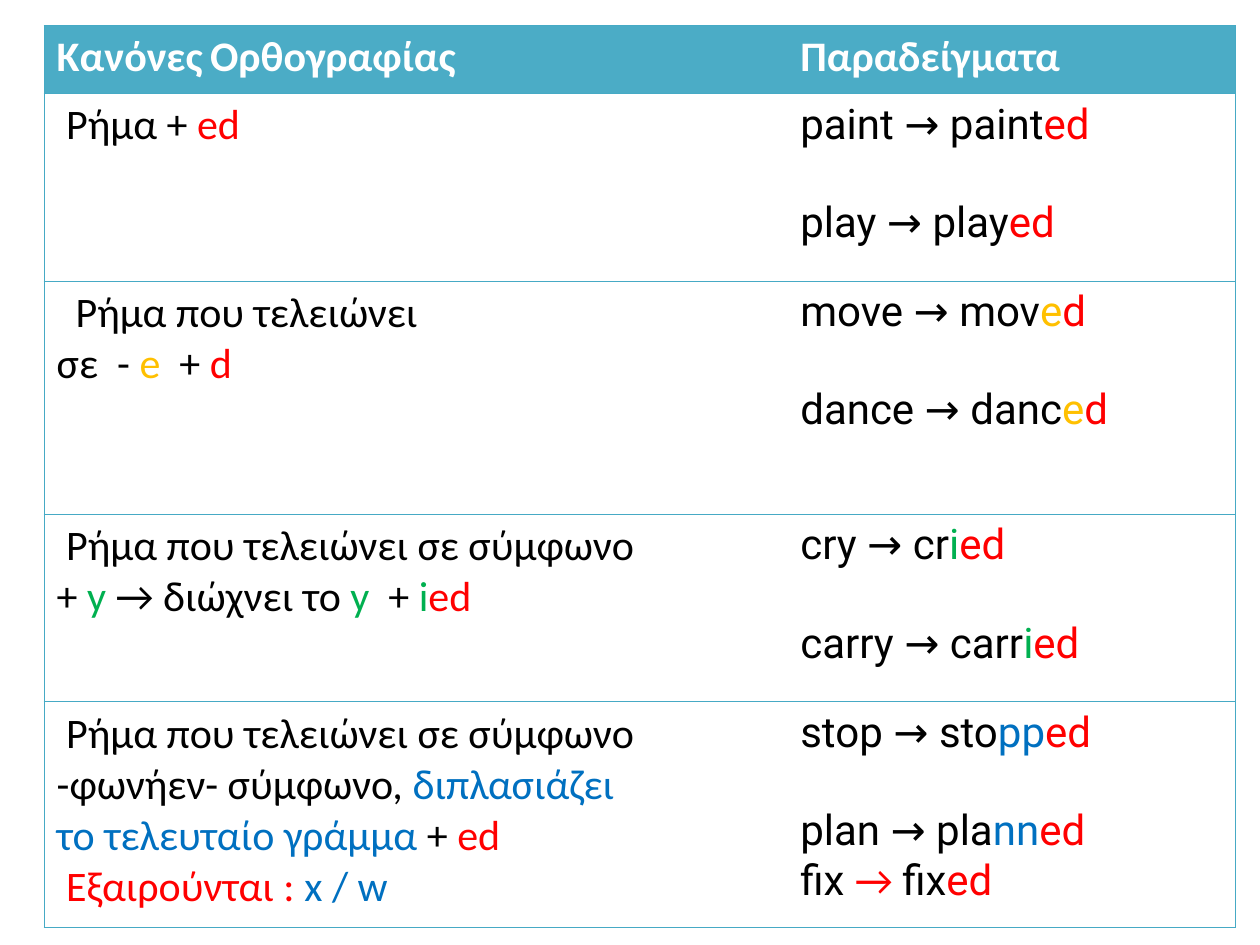
from lxml.etree import SubElement
from pptx import Presentation
from pptx.dml.color import RGBColor
from pptx.oxml.ns import qn
from pptx.util import Cm, Pt

THEME = {
    "black": "000000", "white": "FFFFFF", "red": "FF0000", "amber": "FFC000",
    "green": "00B050", "blue": "0070C0", "header": "4BACC6", "border": "46AAC5",
    "rule_font": "Calibri", "example_font": "Roboto",
    "size": 24, "small": 18, "gap": 28, "indent": 5.4, "line": 0.75,
}
NO_STYLE = "{2D5ABB26-0587-4C30-8999-92F81FD0307C}"
LEFT, TOP = 0.89, 0.52
COLUMN_WIDTHS = [14.99, 9.02]
ROW_HEIGHTS = [1.37, 3.78, 4.7, 3.78, 4.55]

HEADERS = [
    [("Κανόνες", "white"), (" ", "white", {"size": THEME["small"]}), ("Ορθογραφίας", "white")],
    [("Παραδείγματα", "white")],
]
RULES = [
    [[("Ρήμα + ", "black"), ("ed", "red")]],
    [[("Ρήμα που τελειώνει", "black")],
     [("σε  -", "black"), (" e  ", "amber"), ("+ ", "black"), ("d", "red")]],
    [[("Ρήμα που τελειώνει σε σύμφωνο", "black")],
     [("+ ", "black"), ("y ", "green"), ("→ διώχνει το ", "black"), ("y", "green"),
      ("  + ", "black"), ("i", "green"), ("ed", "red")]],
    [[("Ρήμα που τελειώνει σε σύμφωνο", "black")],
     [("-φωνήεν- σύμφωνο, ", "black"), ("διπλασιάζει", "blue")],
     [("το τελευταίο γράμμα ", "blue"), ("+ ", "black"), ("ed", "red")],
     [("Εξαιρούνται : ", "red"), ("x / w", "blue")]],
]
RULE_INDENTS = [{0: 1}, {0: 2}, {0: 1}, {0: 1, 3: 1}]
EXAMPLES = [
    [[("paint → paint", "black"), ("ed", "red")],
     [("play → play", "black"), ("ed", "red")]],
    [[("move → mov", "black"), ("e", "amber"), ("d", "red")],
     [("dance → danc", "black"), ("e", "amber"), ("d", "red")]],
    [[("cry → cr", "black"), ("i", "green"), ("ed", "red")],
     [("carry → carr", "black"), ("i", "green"), ("ed", "red")]],
    [[("stop → sto", "black"), ("pp", "blue"), ("ed", "red")],
     [("plan → pla", "black"), ("nn", "blue"), ("ed", "red")],
     [("fix ", "black"), ("→ ", "red", {"font": THEME["rule_font"]}),
      ("fix", "black"), ("ed", "red")]],
]


def color(name):
    return RGBColor.from_string(THEME[name])


def write(cell, lines, font, bold=False, gaps=(), indents=None):
    frame = cell.text_frame
    for number, line in enumerate(lines):
        para = frame.paragraphs[0] if number == 0 else frame.add_paragraph()
        if number in gaps:
            para.space_before = Pt(THEME["gap"])
        if indents and number in indents:
            width = Pt(THEME["indent"] * indents[number])
            para._p.get_or_add_pPr().set("indent", str(width))
        for text, tint, *extra in line:
            options = extra[0] if extra else {}
            span = para.add_run()
            span.text = text
            span.font.name = options.get("font", font)
            span.font.size = Pt(options.get("size", THEME["size"]))
            span.font.bold = bold
            span.font.color.rgb = color(tint)


def add_borders(cell, sides):
    properties = cell._tc.get_or_add_tcPr()
    for position, side in enumerate(sides):
        line = SubElement(properties, qn(f"a:ln{side}"), w=str(Pt(THEME["line"])))
        fill = SubElement(line, qn("a:solidFill"))
        SubElement(fill, qn("a:srgbClr"), val=THEME["border"])
        properties.insert(position, line)


deck = Presentation()
deck.slide_width, deck.slide_height = Cm(25.4), Cm(19.05)
page = deck.slides.add_slide(deck.slide_layouts[6])
frame = page.shapes.add_table(
    len(ROW_HEIGHTS), len(COLUMN_WIDTHS), Cm(LEFT), Cm(TOP),
    Cm(sum(COLUMN_WIDTHS)), Cm(sum(ROW_HEIGHTS)))
table = frame.table
table._tbl.tblPr.find(qn("a:tableStyleId")).text = NO_STYLE
table.horz_banding = False
for column, width in zip(table.columns, COLUMN_WIDTHS):
    column.width = Cm(width)
for row, height in zip(table.rows, ROW_HEIGHTS):
    row.height = Cm(height)

for row_number, row in enumerate(table.rows):
    for cell, outer_side in zip(row.cells, "LR"):
        cell.fill.solid()
        cell.fill.fore_color.rgb = color("white" if row_number else "header")
        add_borders(cell, [outer_side, "T", "B"])

for column, header in enumerate(HEADERS):
    write(table.cell(0, column), [header], THEME["rule_font"], bold=True)
for number, (rule, indents, examples) in enumerate(zip(RULES, RULE_INDENTS, EXAMPLES), 1):
    write(table.cell(number, 0), rule, THEME["rule_font"], indents=indents)
    write(table.cell(number, 1), examples, THEME["example_font"], gaps=(1,))

deck.save("out.pptx")
